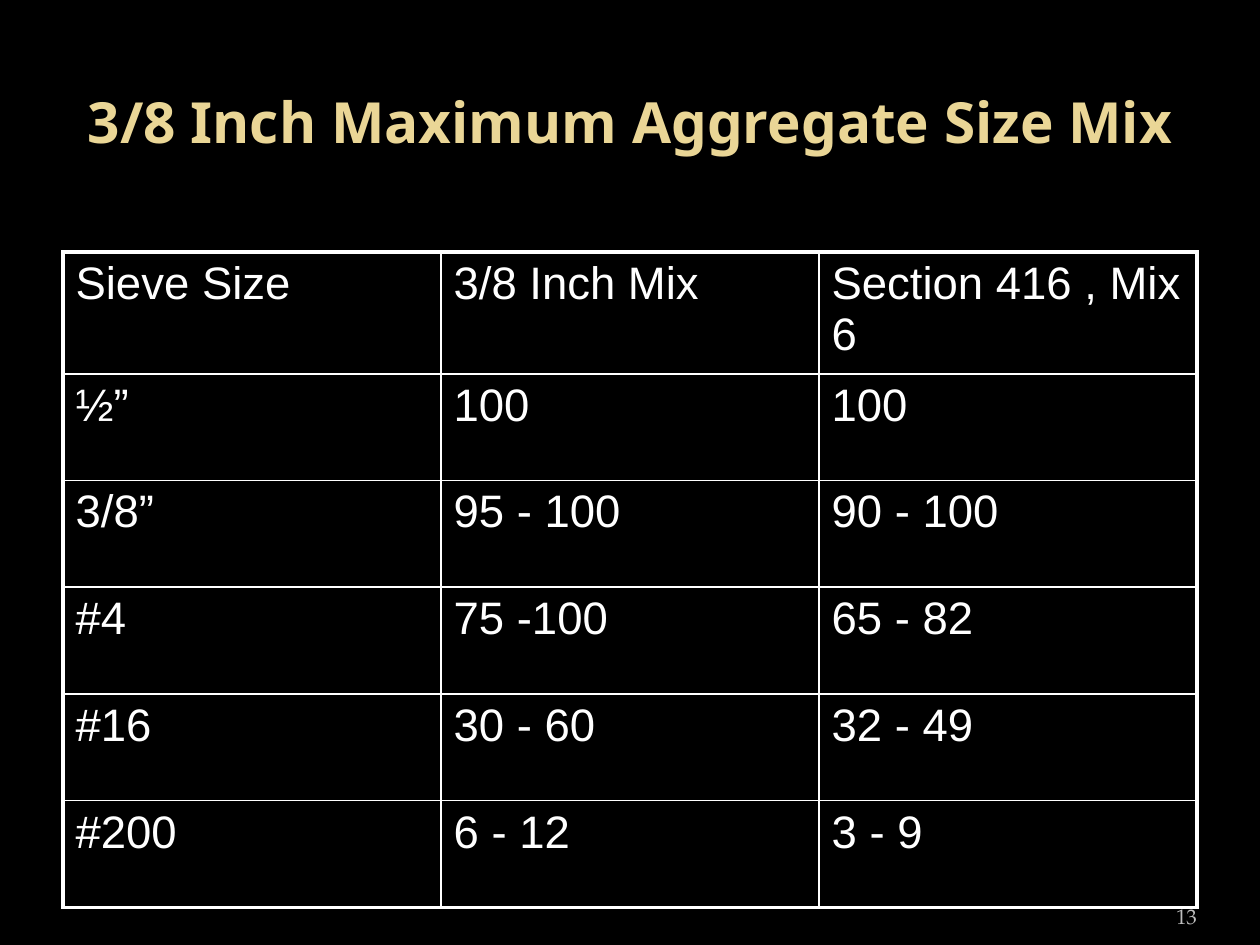
from pptx import Presentation
from pptx.dml.color import RGBColor as RGB
from pptx.enum.text import MSO_ANCHOR as ANCHOR, PP_ALIGN as ALIGN
from pptx.oxml import parse_xml
from pptx.oxml.ns import nsdecls
from pptx.util import Pt

COLORS = {"black": "000000", "white": "FFFFFF", "gold": "EAD696", "grey": "BDBDBD"}
ROWS = [
    ("Sieve Size", "3/8 Inch Mix", "Section 416 , Mix 6"),
    ("½”", "100", "100"),
    ("3/8”", "95 - 100", "90 - 100"),
    ("#4", "75 -100", "65 - 82"),
    ("#16", "30 - 60", "32 - 49"),
    ("#200", "6 - 12", "3 - 9"),
]
OUTER, INNER = 2.25, 1


def style(para, font_name, size, color, align):
    para.alignment = align
    para.font.name = font_name
    para.font.size = Pt(size)
    para.font.color.rgb = RGB.from_string(COLORS[color])


def add_text(page, text, bounds, anchor, side_inset):
    box = page.shapes.add_textbox(*map(Pt, bounds))
    frame = box.text_frame
    frame.word_wrap = True
    frame.vertical_anchor = anchor
    frame.margin_left = frame.margin_right = Pt(side_inset)
    frame.text = text
    return frame.paragraphs[0]


deck = Presentation()
deck.slide_width, deck.slide_height = Pt(720), Pt(540)
page = deck.slides.add_slide(deck.slide_layouts[6])
page.background.fill.solid()
page.background.fill.fore_color.rgb = RGB.from_string(COLORS["black"])

# Title
para = add_text(page, "3/8 Inch Maximum Aggregate Size Mix",
                (36, 30.24, 648, 77.76), ANCHOR.MIDDLE, 7.2)
style(para, "Noto Sans", 32.4, "gold", ALIGN.CENTER)
para.font.bold = True

# Gradation table: header row is taller for its two lines
table = page.shapes.add_table(len(ROWS), 3, Pt(36), Pt(144), Pt(648), Pt(370)).table
table.first_row = table.horz_banding = False
for column in table.columns:
    column.width = Pt(216)
for row in table.rows:
    row.height = Pt(61)
table.rows[0].height = Pt(65)

last_row, last_column = len(ROWS) - 1, 2
for r, values in enumerate(ROWS):
    for c, value in enumerate(values):
        cell = table.cell(r, c)
        cell.text = value
        cell.fill.background()
        para = cell.text_frame.paragraphs[0]
        style(para, "Arial", 26, "white", ALIGN.LEFT)

        # Heavy frame outside, thin grid inside
        edges = {"lnL": c == 0, "lnR": c == last_column,
                 "lnT": r == 0, "lnB": r == last_row}
        properties = cell._tc.get_or_add_tcPr()
        for position, (tag, is_outer) in enumerate(edges.items()):
            width = Pt(OUTER if is_outer else INNER)
            properties.insert(position, parse_xml(
                f'<a:{tag} {nsdecls("a")} w="{width}"><a:solidFill>'
                f'<a:srgbClr val="{COLORS["white"]}"/></a:solidFill></a:{tag}>'))

# Slide number
para = add_text(page, "13", (624.24, 505.44, 59.76, 28.8), ANCHOR.BOTTOM, 0)
style(para, "TeX Gyre Pagella", 12, "grey", ALIGN.RIGHT)

deck.save("out.pptx")
